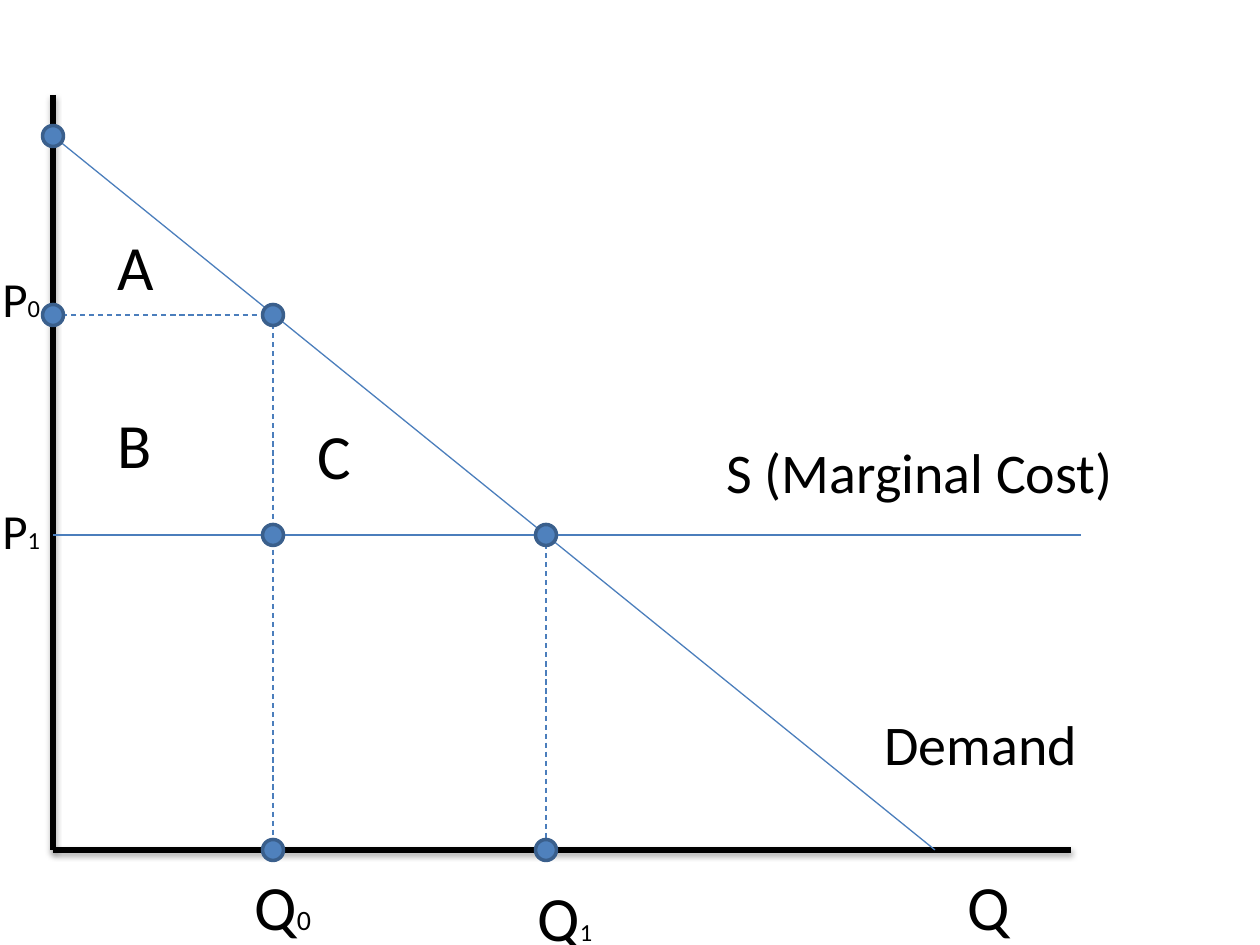
import pptx
import pptx.util
import pptx.dml.color
import pptx.enum.dml
import pptx.enum.shapes
import lxml.etree
from pptx.oxml.ns import qn

SCALE = 914400 / 126
BLACK = pptx.dml.color.RGBColor(0x00, 0x00, 0x00)
CURVE = pptx.dml.color.RGBColor(0x4B, 0x7E, 0xBC)
DOT_FILL = pptx.dml.color.RGBColor(0x4F, 0x81, 0xBD)
DOT_LINE = pptx.dml.color.RGBColor(0x3A, 0x5F, 0x8C)


def px(*values):
    return [pptx.util.Emu(round(v * SCALE)) for v in values]


def add_line(s, ends, color, width, dash=False):
    line = s.shapes.add_connector(pptx.enum.shapes.MSO_CONNECTOR.STRAIGHT, *px(*ends))
    line.line.color.rgb = color
    line.line.width = pptx.util.Pt(width)
    if dash:
        line.line.dash_style = pptx.enum.dml.MSO_LINE.DASH
    return lxml.etree.SubElement(line._element.spPr, qn("a:effectLst"))


prs = pptx.Presentation()
prs.slide_width, prs.slide_height = px(1260, 945)
s = prs.slides.add_slide(prs.slide_layouts[6])

x0, q0, q1 = 53, 273, 546
top, p0, p1, base = 136, 315, 535, 850

for ends in [(x0, 95, x0, base), (x0, base, 1071, base)]:
    effects = add_line(s, ends, BLACK, 3)
    shadow = lxml.etree.SubElement(
        effects, qn("a:outerShdw"), blurRad="40000", dist="23000", dir="5400000", rotWithShape="0"
    )
    clr = lxml.etree.SubElement(shadow, qn("a:srgbClr"), val="000000")
    lxml.etree.SubElement(clr, qn("a:alpha"), val="35000")

for ends, dash in [
    ((x0, top, 935, base), False),
    ((x0, p1, 1081, p1), False),
    ((x0, p0, q0, p0), True),
    ((q0, p0, q0, base), True),
    ((q1, p1, q1, base), True),
]:
    add_line(s, ends, CURVE, 0.75, dash)

for x, y, w, h, runs in [
    (105, 221, 95, 89, [("A", 36)]),
    (105, 399, 105, 89, [("B", 36)]),
    (305, 410, 105, 89, [("C", 36)]),
    (242, 861, 84, 89, [("Q", 36), ("0", 16)]),
    (525, 872, 95, 89, [("Q", 36), ("1", 14)]),
    (955, 861, 136, 89, [("Q", 36)]),
    (872, 703, 273, 81, [("Demand", 32)]),
    (714, 431, 525, 81, [("S (Marginal Cost)", 32)]),
    (-10, 262, 105, 72, [("P", 28), ("0", 14)]),
    (-10, 494, 95, 72, [("P", 28), ("1", 14)]),
]:
    tf = s.shapes.add_textbox(*px(x, y, w, h)).text_frame
    tf.word_wrap = True
    p = tf.paragraphs[0]
    p.font.name = "Calibri"
    p.font.color.rgb = BLACK
    for text, size in runs:
        r = p.add_run()
        r.text = text
        r.font.size = pptx.util.Pt(size)

d = 21
for x, y in [(q0, p0), (x0, top), (x0, p0), (q0, p1), (q1, p1), (q1, base), (q0, base)]:
    sp = s.shapes.add_shape(pptx.enum.shapes.MSO_SHAPE.OVAL, *px(x - d / 2, y - d / 2, d, d))
    sp.shadow.inherit = False
    sp.fill.solid()
    sp.fill.fore_color.rgb = DOT_FILL
    sp.line.color.rgb = DOT_LINE
    sp.line.width = pptx.util.Pt(2)

prs.save("out.pptx")
